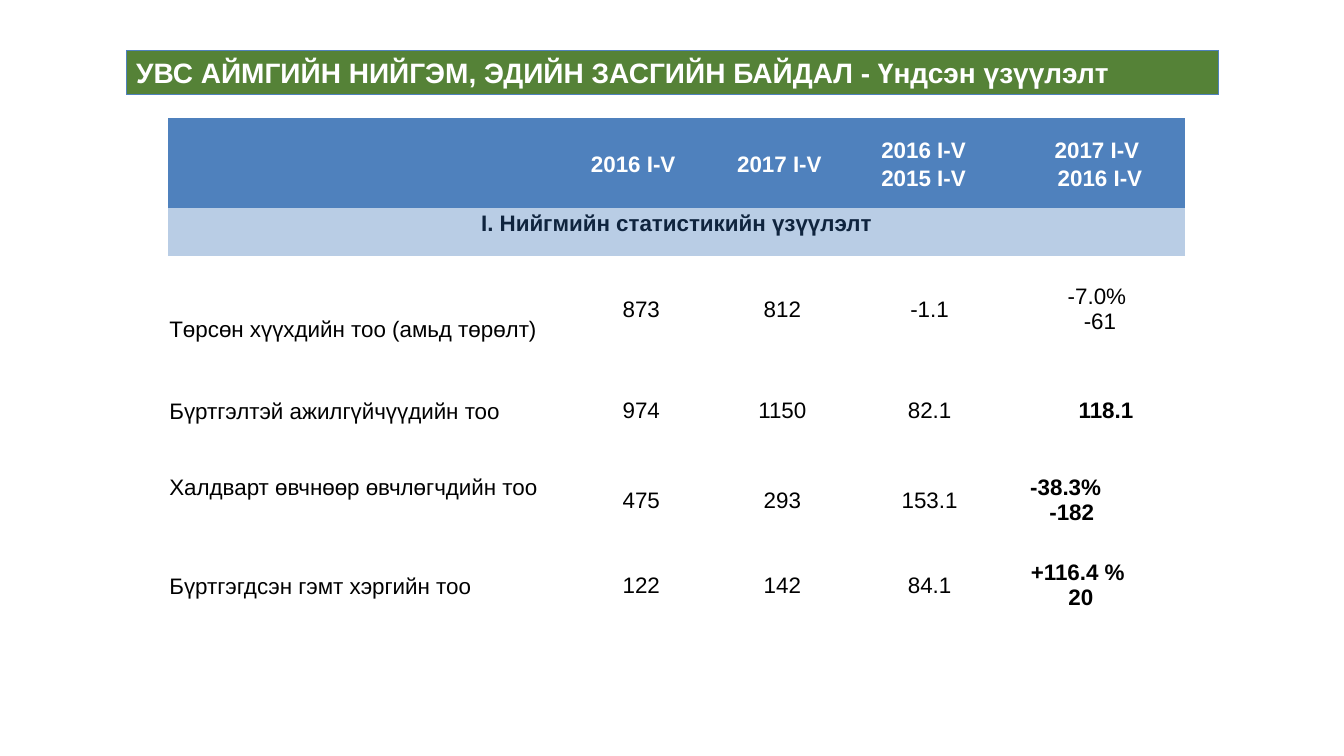
from pptx import Presentation
from pptx.dml.color import RGBColor
from pptx.enum.text import MSO_ANCHOR, MSO_AUTO_SIZE, PP_ALIGN
from pptx.util import Inches, Pt

COLORS = {"green": "558237", "blue": "4F81BD", "pale": "B9CDE5",
          "white": "FFFFFF", "black": "000000", "navy": "0F243E"}
FONT = "Arial"
PLAIN = "{2D5ABB26-0587-4C30-8999-92F81FD0307C}"
TITLE = "УВС АЙМГИЙН НИЙГЭМ, ЭДИЙН ЗАСГИЙН БАЙДАЛ - Үндсэн үзүүлэлт"
SECTION = "I. Нийгмийн статистикийн үзүүлэлт"
COLS = [3.86, 0.1, 1.46, 1.34, 1.58, 1.74]
ROWS = [0.89, 0.48, 1.05, 0.97, 0.8, 0.89]

# Each line of a cell is (text, shift of its centre in inches).
HEADS = {
    1: [("2016 I-V", -0.03)],
    3: [("2017 I-V", -0.03)],
    4: [("2016 I-V", -0.06), ("2015 I-V", 0)],
    5: [("2017 I-V", 0), ("2016 I-V", 0.03)],
}
BODY = [
    ("Төрсөн хүүхдийн тоо (амьд төрөлт)", 0.4, 0, ["873", "812", "-1.1"],
     [("-7.0%", 0), ("-61", 0.03)], False),
    ("Бүртгэлтэй ажилгүйчүүдийн тоо", 0.01, 0, ["974", "1150", "82.1"],
     [("118.1", 0.09)], True),
    ("Халдварт өвчнөөр өвчлөгчдийн тоо", 0.01, 0.26, ["475", "293", "153.1"],
     [("-38.3%", -0.31), ("-182", 0.06)], True),
    ("Бүртгэгдсэн гэмт хэргийн тоо", 0.01, 0, ["122", "142", "84.1"],
     [("+116.4 %", -0.19), ("20", 0.03)], True),
]


def color(name):
    return RGBColor.from_string(COLORS[name])


def write(para, text, size, ink, bold):
    run = para.add_run()
    run.text = text
    font = run.font
    font.name, font.size, font.bold = FONT, Pt(size), bold
    font.color.rgb = color(ink)


def put(cell, lines, ink="black", bold=False, align=PP_ALIGN.CENTER,
        space=1.0, side=0.01, top=0.01, bottom=0, anchor=MSO_ANCHOR.MIDDLE):
    cell.margin_left = cell.margin_right = Inches(side)
    cell.margin_top, cell.margin_bottom = Inches(top), Inches(bottom)
    cell.vertical_anchor = anchor
    frame = cell.text_frame
    for i, (text, shift) in enumerate(lines):
        para = frame.add_paragraph() if i else frame.paragraphs[0]
        para.alignment = align
        para.line_spacing = space
        if shift:
            edge = "marL" if shift > 0 else "marR"
            para._p.get_or_add_pPr().set(edge, str(Inches(2 * abs(shift))))
        write(para, text, 16, ink, bold)


def add_title(slide):
    title = slide.shapes.title
    title.left, title.top = Inches(1.25), Inches(0.5)
    title.width, title.height = Inches(10.84), Inches(0.44)
    title.fill.solid()
    title.fill.fore_color.rgb = color("green")
    title.line.color.rgb = color("blue")
    title.line.width = Pt(0.75)
    frame = title.text_frame
    frame.auto_size = MSO_AUTO_SIZE.NONE
    frame.word_wrap = True
    frame.vertical_anchor = MSO_ANCHOR.MIDDLE
    para = frame.paragraphs[0]
    para.alignment = PP_ALIGN.JUSTIFY
    write(para, TITLE, 20, "white", True)


def add_grid(slide):
    frame = slide.shapes.add_table(
        len(ROWS), len(COLS), Inches(1.67), Inches(1.17),
        Inches(sum(COLS)), Inches(sum(ROWS)))
    table = frame.table
    table.first_row = table.horz_banding = False
    table._tbl.tblPr[0].text = PLAIN
    for col, width in zip(table.columns, COLS):
        col.width = Inches(width)
    fills = ["blue", "pale"] + ["white"] * len(BODY)
    for row, height, fill in zip(table.rows, ROWS, fills):
        row.height = Inches(height)
        for cell in row.cells:
            cell.fill.solid()
            cell.fill.fore_color.rgb = color(fill)

    table.cell(0, 1).merge(table.cell(0, 2))
    for c, lines in HEADS.items():
        put(table.cell(0, c), lines, "white", True, space=1.15, side=0.02, top=0)

    table.cell(1, 0).merge(table.cell(1, 5))
    put(table.cell(1, 0), [(SECTION, 0)], "navy", True, space=1.15,
        side=0.02, top=0, anchor=MSO_ANCHOR.TOP)

    for r, (label, top, bottom, values, change, bold) in enumerate(BODY, 2):
        table.cell(r, 0).merge(table.cell(r, 1))
        put(table.cell(r, 0), [(label, 0)], align=PP_ALIGN.LEFT, space=1.07,
            top=top, bottom=bottom)
        for c, value in enumerate(values, 2):
            put(table.cell(r, c), [(value, 0)])
        put(table.cell(r, 5), change, bold=bold)


def main():
    deck = Presentation()
    deck.slide_width, deck.slide_height = Inches(13.33), Inches(7.5)
    slide = deck.slides.add_slide(deck.slide_layouts[5])
    add_title(slide)
    add_grid(slide)
    deck.save("out.pptx")


if __name__ == "__main__":
    main()
